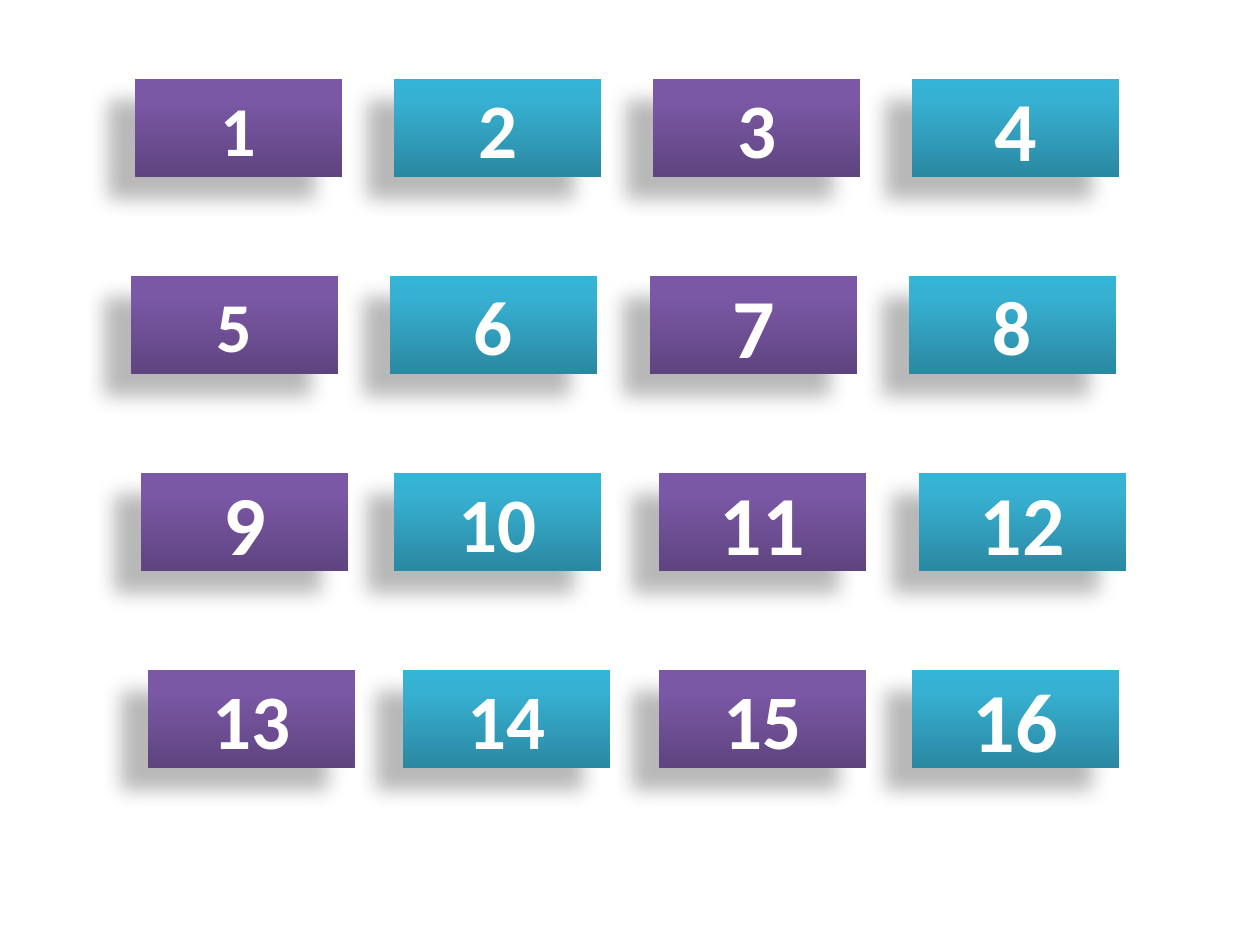
import pptx
import pptx.util
import pptx.dml.color
import pptx.enum.shapes
import pptx.enum.text
import pptx.oxml.ns
import lxml.etree

ROWS = [
    {"lefts": [135, 394, 653, 912], "sizes": [40, 44, 44, 48]},
    {"lefts": [131, 390, 650, 909], "sizes": [40, 44, 48, 44]},
    {"lefts": [141, 394, 659, 919], "sizes": [48, 44, 48, 48]},
    {"lefts": [148, 403, 659, 912], "sizes": [44, 44, 44, 48]},
]
COLORS = {
    "purple": ["5F4480", "7B58A6", "7C57A8"],
    "teal": ["2A88A2", "37B1D2", "34B4D6"],
    "text": "FFFFFF",
    "shadow": "000000",
}
STOPS = [0, 80, 100]
SHADOW = {"blur": 11.8, "dist": 19.7, "angle": 141, "alpha": 28}
TOP, ROW_STEP = 79, 197
BOX_W, BOX_H = 207, 98
SLIDE_W, SLIDE_H = 1260, 945


def px(n):
    return round(n * 914400 / 126)


def add(parent, tag, **attrs):
    el = lxml.etree.SubElement(parent, pptx.oxml.ns.qn(tag))
    for name, value in attrs.items():
        el.set(name, str(value))
    return el


def fill_gradient(sp, colors):
    sp.fill.gradient()
    sp.fill.gradient_angle = 90
    stops = next(sp._element.spPr.iter(pptx.oxml.ns.qn("a:gsLst")))
    for gs in list(stops):
        stops.remove(gs)
    for pos, color in zip(STOPS, colors):
        add(add(stops, "a:gs", pos=pos * 1000), "a:srgbClr", val=color)


def cast_shadow(sp):
    sp.shadow.inherit = False
    effects = sp._element.spPr.find(pptx.oxml.ns.qn("a:effectLst"))
    shadow = add(effects, "a:outerShdw",
                 blurRad=pptx.util.Pt(SHADOW["blur"]),
                 dist=pptx.util.Pt(SHADOW["dist"]),
                 dir=SHADOW["angle"] * 60000, algn="ctr", rotWithShape=0)
    color = add(shadow, "a:srgbClr", val=COLORS["shadow"])
    add(color, "a:alpha", val=SHADOW["alpha"] * 1000)


def add_number_box(slide, number, left, top, size, colors):
    sp = slide.shapes.add_shape(
        pptx.enum.shapes.MSO_SHAPE.FLOWCHART_PREDEFINED_PROCESS,
        px(left), px(top), px(BOX_W), px(BOX_H))
    fill_gradient(sp, colors)
    sp.line.fill.background()
    cast_shadow(sp)
    tf = sp.text_frame
    tf.text = str(number)
    tf.vertical_anchor = pptx.enum.text.MSO_ANCHOR.MIDDLE
    p = tf.paragraphs[0]
    p.alignment = pptx.enum.text.PP_ALIGN.CENTER
    r = p.runs[0]
    r.font.name = "Calibri"
    r.font.size = pptx.util.Pt(size)
    r.font.bold = True
    r.font.color.rgb = pptx.dml.color.RGBColor.from_string(COLORS["text"])


def main():
    prs = pptx.Presentation()
    prs.slide_width, prs.slide_height = px(SLIDE_W), px(SLIDE_H)
    slide = prs.slides.add_slide(prs.slide_layouts[6])
    for i, row in enumerate(ROWS):
        for j, (left, size) in enumerate(zip(row["lefts"], row["sizes"])):
            colors = COLORS["teal" if j % 2 else "purple"]
            number = i * len(row["lefts"]) + j + 1
            add_number_box(slide, number, left, TOP + i * ROW_STEP, size, colors)
    prs.save("out.pptx")


if __name__ == "__main__":
    main()
